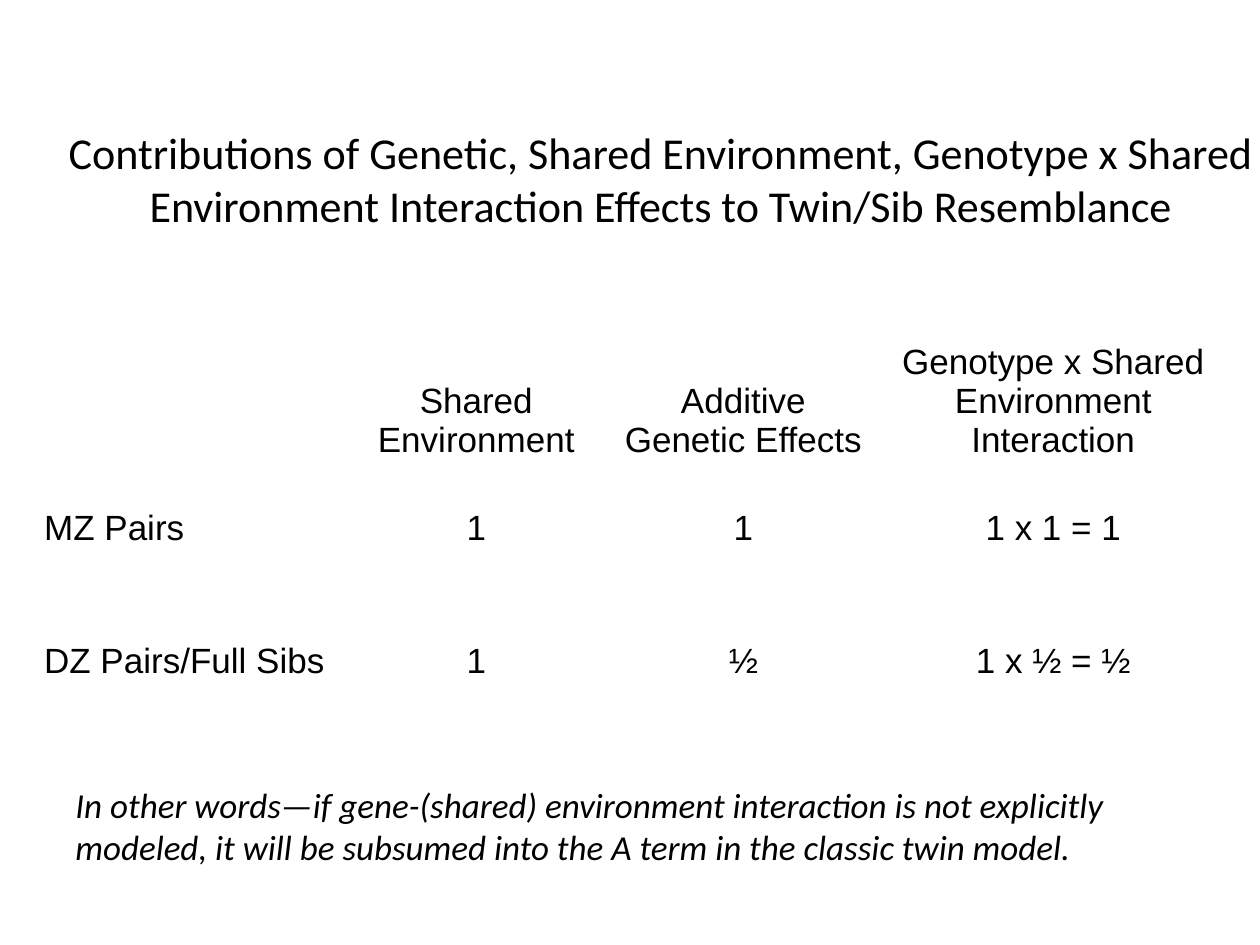
"""Build a slide on genetic and environmental contributions to twin resemblance."""
import dataclasses

import pptx
import pptx.dml.color
import pptx.enum.text
import pptx.util

Inches = pptx.util.Inches
Align = pptx.enum.text.PP_ALIGN
Anchor = pptx.enum.text.MSO_ANCHOR


@dataclasses.dataclass(frozen=True)
class Theme:
    ink: str = "000000"
    heading_font: str = "Calibri"
    table_font: str = "Arial"
    title_size: float = 25.2
    body_size: float = 20


THEME = Theme()
TITLE = (
    "Contributions of Genetic, Shared Environment, Genotype x Shared "
    "Environment Interaction Effects to Twin/Sib Resemblance"
)
EFFECTS = [
    ("", "Shared Environment", "Additive Genetic Effects",
     "Genotype x Shared Environment Interaction"),
    ("MZ Pairs", "1", "1", "1 x 1 = 1"),
    ("DZ Pairs/Full Sibs", "1", "½", "1 x ½ = ½"),
]
CONCLUSION = [
    "In other words—if gene-(shared) environment interaction is not explicitly",
    "modeled, it will be subsumed into the A term in the classic twin model.",
]
TITLE_AREA = (0.37, 0.91, 9.75, 1.01)
TABLE_ORIGIN = (0.25, 2.42)
COLUMN_WIDTHS = (2.48, 2.1, 2.14, 2.78)
ROW_HEIGHTS = (1.28, 0.99, 1.12)
CONCLUSION_AREA = (0.5, 6.17, 9.1, 0.77)


def write(frame, lines, font, size, align, italic=False):
    for index, line in enumerate(lines):
        para = frame.add_paragraph() if index else frame.paragraphs[0]
        para.alignment = align
        span = para.add_run()
        span.text = line
        span.font.name = font
        span.font.size = pptx.util.Pt(size)
        span.font.italic = italic
        span.font.color.rgb = pptx.dml.color.RGBColor.from_string(THEME.ink)


def add_text(page, area, lines, size, align, anchor, italic=False):
    box = page.shapes.add_textbox(*map(Inches, area))
    box.text_frame.word_wrap = True
    box.text_frame.vertical_anchor = anchor
    write(box.text_frame, lines, THEME.heading_font, size, align, italic)


def add_effects_table(page):
    extent = (sum(COLUMN_WIDTHS), sum(ROW_HEIGHTS))
    table = page.shapes.add_table(
        len(EFFECTS), len(COLUMN_WIDTHS), *map(Inches, TABLE_ORIGIN + extent)
    ).table
    table.first_row = table.horz_banding = False
    for column, width in zip(table.columns, COLUMN_WIDTHS):
        column.width = Inches(width)
    for row, height in zip(table.rows, ROW_HEIGHTS):
        row.height = Inches(height)
    for row_index, values in enumerate(EFFECTS):
        for column_index, value in enumerate(values):
            cell = table.cell(row_index, column_index)
            cell.fill.background()
            cell.vertical_anchor = Anchor.MIDDLE if row_index else Anchor.BOTTOM
            if value:
                align = Align.CENTER if column_index else Align.LEFT
                write(cell.text_frame, [value], THEME.table_font, THEME.body_size, align)


def main():
    deck = pptx.Presentation()
    deck.slide_width, deck.slide_height = Inches(10), Inches(7.5)
    page = deck.slides.add_slide(deck.slide_layouts[6])
    add_text(page, TITLE_AREA, [TITLE], THEME.title_size, Align.CENTER, Anchor.MIDDLE)
    add_effects_table(page)
    add_text(page, CONCLUSION_AREA, CONCLUSION, THEME.body_size, Align.LEFT,
             Anchor.TOP, italic=True)
    deck.save("out.pptx")


if __name__ == "__main__":
    main()
